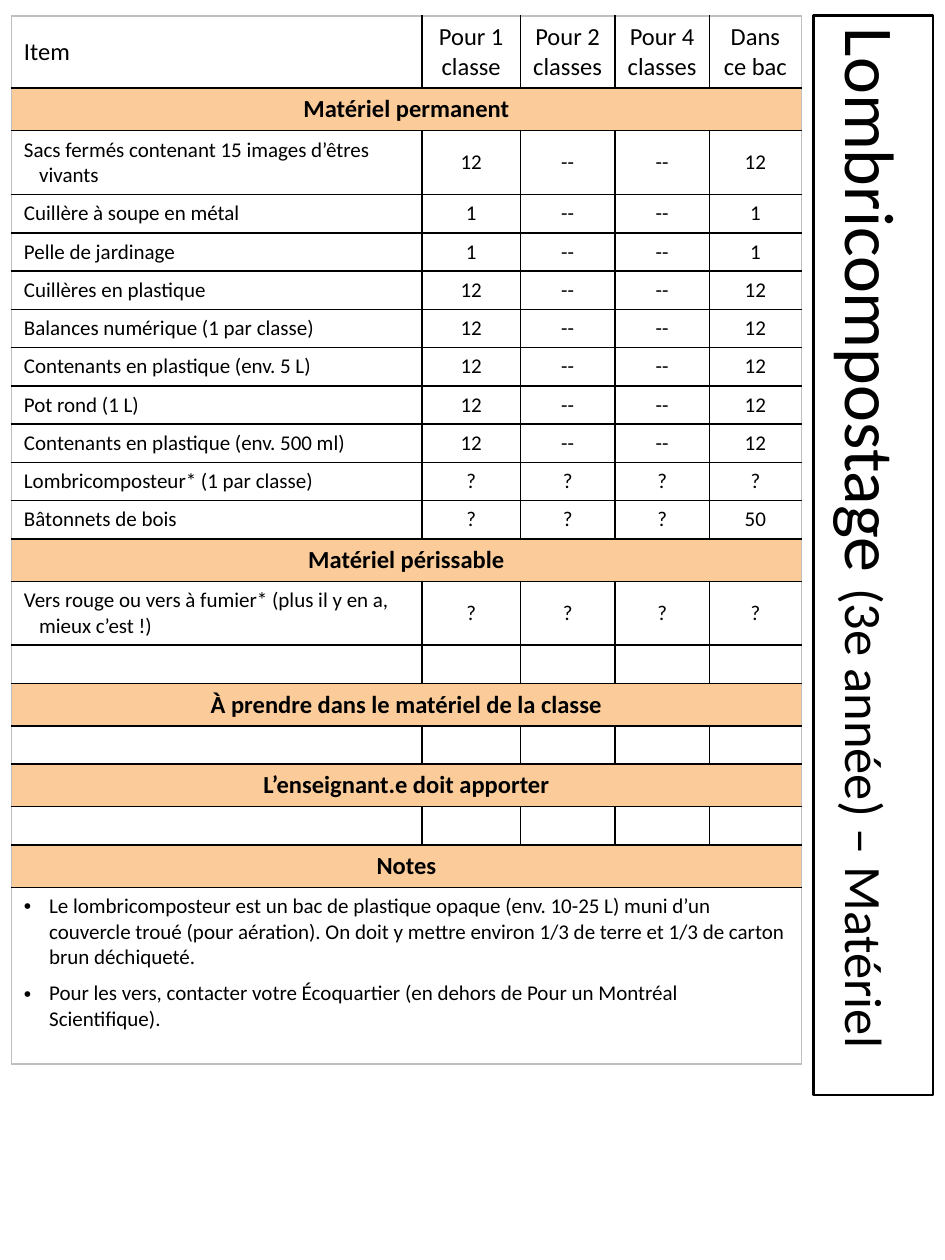
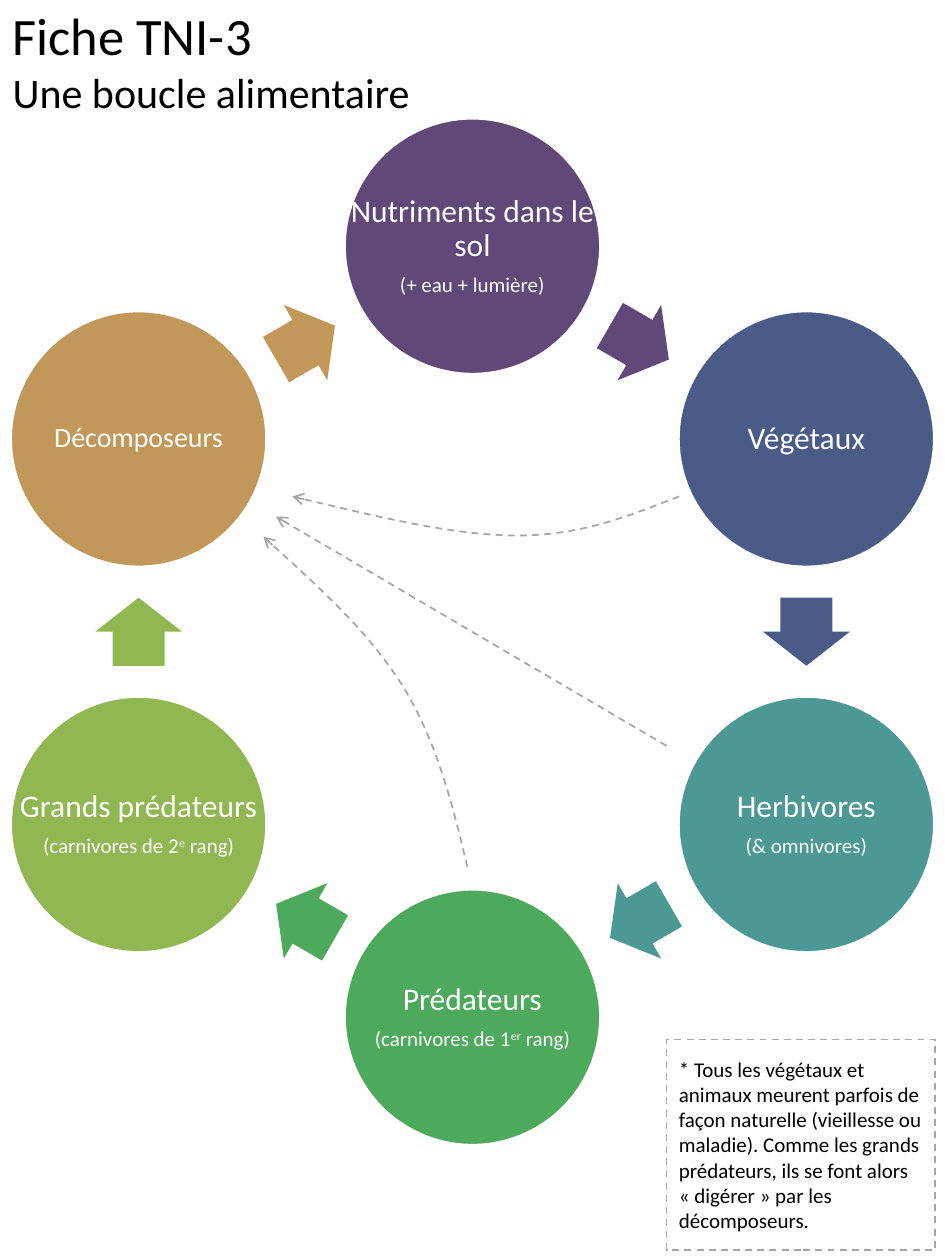
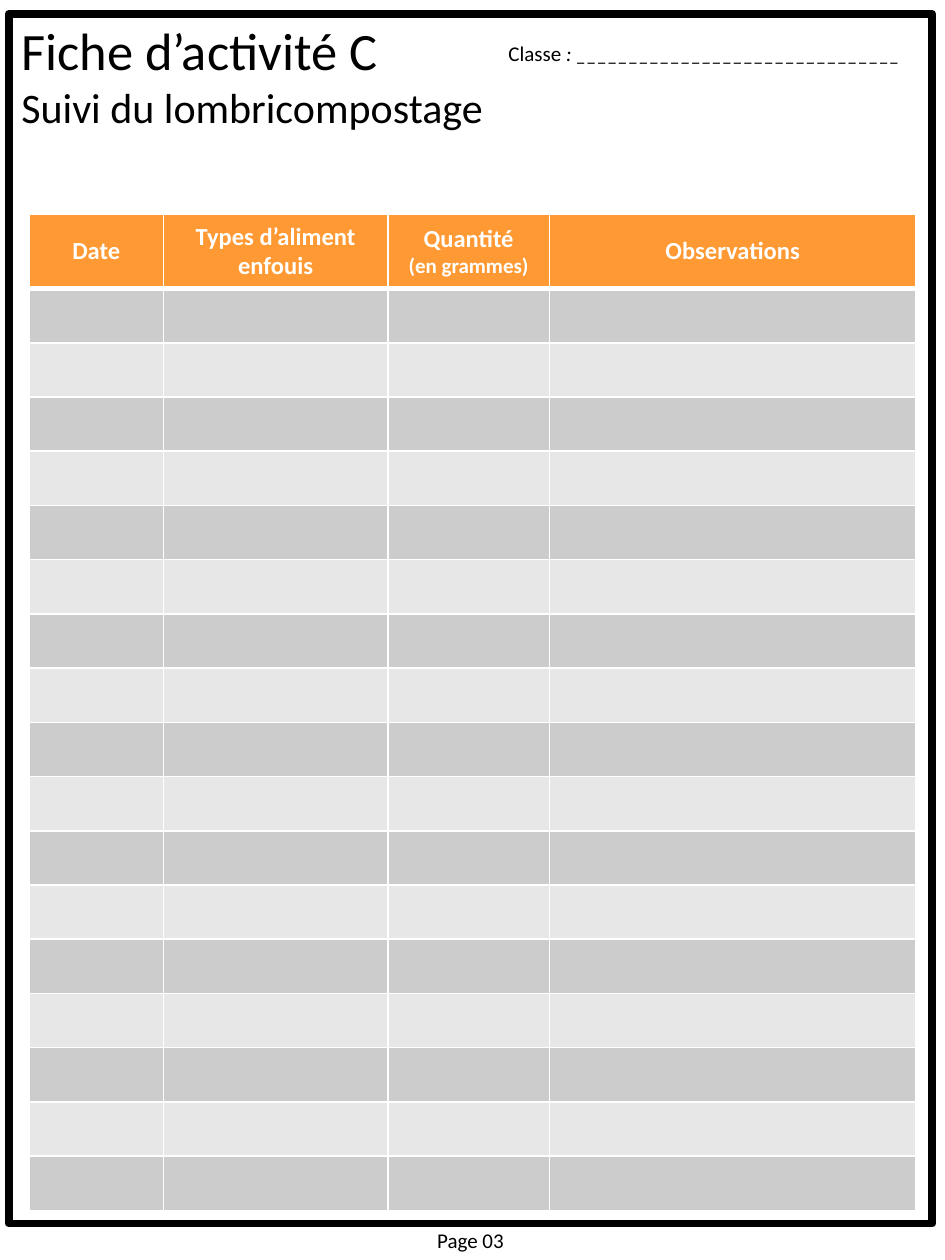
import math
from dataclasses import dataclass

import pptx
import pptx.dml.color
import pptx.enum.dml
import pptx.enum.shapes
import pptx.enum.text
import pptx.oxml.ns
import pptx.util
from lxml import etree

Pt = pptx.util.Pt
RGB = pptx.dml.color.RGBColor.from_string
qn = pptx.oxml.ns.qn
ALIGN = pptx.enum.text.PP_ALIGN
ANCHOR = pptx.enum.text.MSO_ANCHOR
SHAPE = pptx.enum.shapes.MSO_SHAPE
DASH = pptx.enum.dml.MSO_LINE.DASH


@dataclass(frozen=True)
class Theme:
    font: str = "Calibri"
    ink: str = "000000"
    paper: str = "FFFFFF"
    band: str = "FBCC9A"
    header: str = "FF9933"
    stripes: tuple = ("CCCCCC", "E7E7E7")
    edge: str = "BFBFBF"
    faint: str = "A6A6A6"
    banner: int = 40
    title: int = 30
    subtitle: int = 24
    stage: int = 18
    heading: int = 14
    body: int = 12


theme = Theme()


def write(frame, lines, align=ALIGN.LEFT, anchor=ANCHOR.MIDDLE, wrap=True, color=theme.ink, **base):
    """Fill a text frame; each line is a list of (text, format) runs, "\\v" breaks a line."""
    for name, value in {"word_wrap": wrap, "vertical_anchor": anchor,
                        "auto_size": pptx.enum.text.MSO_AUTO_SIZE.NONE}.items():
        setattr(frame, name, value)
    for number, runs in enumerate(lines):
        paragraph = frame.add_paragraph() if number else frame.paragraphs[0]
        paragraph.alignment = align
        for text, changes in runs:
            if text == "\v":
                paragraph.add_line_break()
                continue
            run = paragraph.add_run()
            run.text = text
            run.font.color.rgb = RGB(color)
            formats = {"name": theme.font, **base, **changes}
            if formats.pop("raised", False):
                run._r.get_or_add_rPr().set("baseline", "30000")
            for name, value in formats.items():
                setattr(run.font, name, value)


def style_cell(cell, fill, borders):
    """Give a cell its fill and its borders, a dict of side to (colour, width)."""
    properties = cell._tc.get_or_add_tcPr()
    for side in "LRTB":
        color, width = borders[side]
        line = etree.SubElement(properties, qn(f"a:ln{side}"), w=str(Pt(width)))
        solid = etree.SubElement(line, qn("a:solidFill"))
        etree.SubElement(solid, qn("a:srgbClr"), val=color)
    if fill:
        cell.fill.solid()
        cell.fill.fore_color.rgb = RGB(fill)
    else:
        cell.fill.background()
    if not cell.text_frame.text:
        end = cell.text_frame.paragraphs[0]._p
        etree.SubElement(end, qn("a:endParaRPr"), sz=str(theme.body * 100))


deck = pptx.Presentation()
deck.slide_width, deck.slide_height = Pt(540), Pt(720)
title_only, title_and_body = deck.slide_layouts[5], deck.slide_layouts[1]

# Slide 1: list of material
slide = deck.slides.add_slide(title_only)
banner = slide.shapes.title
for name, value in {"left": 190.4, "top": 283, "width": 617, "height": 68.4}.items():
    setattr(banner, name, Pt(value))
banner.rotation = 90
banner.line.color.rgb = RGB(theme.ink)
banner.line.width = Pt(1.5)
write(banner.text_frame, [[("Lombricompostage ", {"size": Pt(theme.banner)}),
                           ("(3e année) – Matériel", {"size": Pt(theme.title)})]])

DOZEN = ["12", "--", "--", "12"]
SINGLE = ["1", "--", "--", "1"]
UNKNOWN = ["?"] * 4
BLANK = [""] * 5
notes = [
    "Le lombricomposteur est un bac de plastique opaque (env. 10-25 L) muni d’un couvercle troué "
    "(pour aération). On doit y mettre environ 1/3 de terre et 1/3 de carton brun déchiqueté.",
    "Pour les vers, contacter votre Écoquartier (en dehors de Pour un Montréal Scientifique).",
]
# A row of one text is a section band; "notes" marks the row of notes.
material = [
    ["Item", "Pour 1 classe", "Pour 2 classes", "Pour 4 classes", "Dans ce bac"],
    ["Matériel permanent"],
    ["Sacs fermés contenant 15 images d’êtres vivants", *DOZEN],
    ["Cuillère à soupe en métal", *SINGLE],
    ["Pelle de jardinage", *SINGLE],
    ["Cuillères en plastique", *DOZEN],
    ["Balances numérique (1 par classe)", *DOZEN],
    ["Contenants en plastique (env. 5 L)", *DOZEN],
    ["Pot rond (1 L)", *DOZEN],
    ["Contenants en plastique (env. 500 ml)", *DOZEN],
    ["Lombricomposteur* (1 par classe)", *UNKNOWN],
    ["Bâtonnets de bois", "?", "?", "?", "50"],
    ["Matériel périssable"],
    ["Vers rouge ou vers à fumier* (plus il y en a, mieux c’est !)", *UNKNOWN],
    BLANK,
    ["À prendre dans le matériel de la classe"],
    BLANK,
    ["L’enseignant.e doit apporter"],
    BLANK,
    ["Notes"],
    ["notes"],
]
last_row, last_column = len(material) - 1, 4
inventory = slide.shapes.add_table(len(material), 5, Pt(6.5), Pt(9), Pt(451.5), Pt(599)).table
inventory.first_row = inventory.horz_banding = False
for column, width in zip(inventory.columns, (234.7, 56.2, 54, 54, 52.6)):
    column.width = Pt(width)
for r, entries in enumerate(material):
    is_notes = r == last_row
    is_merged = len(entries) == 1
    is_band = is_merged and not is_notes
    if r == 0:
        height = 41.4
    elif is_notes:
        height = 101
    elif is_band:
        height = 24.3
    else:
        height = 36.5 if len(entries[0]) > 40 else 21.85
    inventory.rows[r].height = Pt(height)
    if is_merged:
        inventory.cell(r, 0).merge(inventory.cell(r, last_column))
    size = theme.heading if r == 0 or is_band else theme.body
    for c, text in enumerate(entries):
        cell = inventory.cell(r, c)
        if is_notes:
            write(cell.text_frame, [[(note, {})] for note in notes], size=Pt(size))
            cell.vertical_anchor = ANCHOR.TOP
            for number, paragraph in enumerate(cell.text_frame.paragraphs):
                properties = paragraph._p.get_or_add_pPr()
                properties.set("marL", str(Pt(14.4)))
                properties.set("indent", str(-Pt(14.4)))
                etree.SubElement(properties, qn("a:buFont"), typeface="Arial")
                etree.SubElement(properties, qn("a:buChar"), char="•")
                if number:
                    paragraph.space_before = Pt(6)
            continue
        cell.vertical_anchor = ANCHOR.MIDDLE
        if text:
            write(cell.text_frame, [[(text, {})]], size=Pt(size), bold=is_band,
                  align=ALIGN.CENTER if is_band or c else ALIGN.LEFT)
            if r and not is_band and c == 0:
                properties = cell.text_frame.paragraphs[0]._p.get_or_add_pPr()
                properties.set("marL", str(Pt(8.64)))
                properties.set("indent", str(-Pt(8.64)))
    for c in range(5):
        outer = {"L": c == 0, "R": is_merged or c == last_column, "T": r == 0, "B": is_notes}
        style_cell(inventory.cell(r, c), theme.band if is_band else None,
                   {side: (theme.edge if edge else theme.ink, 1) for side, edge in outer.items()})

# Slide 2: food loop
slide = deck.slides.add_slide(title_only)
heading = slide.shapes.title
for name, value in {"left": 0, "top": 0, "width": 336, "height": 68.4}.items():
    setattr(heading, name, Pt(value))
write(heading.text_frame, [[("Fiche TNI-3", {"size": Pt(theme.title)})],
                           [("Une boucle alimentaire", {"size": Pt(theme.subtitle)})]])

small = {"size": Pt(theme.body)}
raised = {**small, "raised": True}
stages = [
    ("604878", [[("Nutriments dans le", {}), ("\v", {}), ("sol", {})], [("(+ eau + lumière)", small)]]),
    ("4A5B88", [[("Végétaux", {})]]),
    ("4C9894", [[("Herbivores", {})], [("(& omnivores)", small)]]),
    ("4DA95C", [[("Prédateurs", {})],
                [("(carnivores de 1", small), ("er", raised), (" rang)", small)]]),
    ("90B751", [[("Grands prédateurs", {})],
                [("(carnivores de 2", small), ("e", raised), (" rang)", small)]]),
    ("C19859", [[("Décomposeurs", {"size": Pt(16)})]]),
]
center_x, center_y, loop_radius, diameter = 270, 361, 220.3, 146.2
arrow_width, arrow_height = 38.9, 49.7
arrow_radius = loop_radius * math.cos(math.radians(30))
for step, (color, label) in enumerate(stages):
    angle = math.radians(60 * step - 90)
    x = center_x + loop_radius * math.cos(angle)
    y = center_y + loop_radius * math.sin(angle)
    circle = slide.shapes.add_shape(SHAPE.OVAL, Pt(x - diameter / 2), Pt(y - diameter / 2),
                                    Pt(diameter), Pt(diameter))
    circle.line.color.rgb = RGB(theme.paper)
    circle.line.width = Pt(1.5)
    write(circle.text_frame, label, ALIGN.CENTER, wrap=False, color=theme.paper, size=Pt(theme.stage))
    for paragraph in circle.text_frame.paragraphs:
        paragraph.line_spacing = 0.9
        paragraph.space_after = Pt(6.3)

    angle += math.radians(30)
    x = center_x + arrow_radius * math.cos(angle)
    y = center_y + arrow_radius * math.sin(angle)
    arrow = slide.shapes.add_shape(SHAPE.RIGHT_ARROW, Pt(x - arrow_width / 2),
                                   Pt(y - arrow_height / 2), Pt(arrow_width), Pt(arrow_height))
    arrow.adjustments[0], arrow.adjustments[1] = 0.6, 0.5
    arrow.rotation = 30 + 60 * step
    arrow.line.fill.background()
    for part in (circle, arrow):
        part.shadow.inherit = False
        part.fill.solid()
        part.fill.fore_color.rgb = RGB(color)

herbivore_remains = slide.shapes.add_connector(
    pptx.enum.shapes.MSO_CONNECTOR.STRAIGHT, Pt(380.9), Pt(426.2), Pt(157.7), Pt(295.2))
etree.SubElement(herbivore_remains._element.spPr, qn("a:effectLst"))
remains = [herbivore_remains]
# Each curve is a start point followed by two Bézier segments of three points.
for start, *bends in (
    [(267.1, 495.4), (258.5, 459.4), (249.8, 424.1), (230.4, 392.4),
     (211, 361.4), (180.7, 334.1), (150.5, 306.7)],
    [(388.1, 283.7), (360, 294.5), (332.6, 306), (295.9, 306),
     (259.2, 306), (213.1, 294.5), (167, 283.7)],
):
    builder = slide.shapes.build_freeform(Pt(start[0]), Pt(start[1]))
    builder.add_line_segments([(Pt(x), Pt(y)) for x, y in bends], close=False)
    curve = builder.convert_to_shape()
    curve.shadow.inherit = False
    curve.fill.background()
    outline = next(curve._element.iter(qn("a:path")))
    segments = outline.findall(qn("a:lnTo"))
    for first in (0, 3):
        bezier = etree.SubElement(outline, qn("a:cubicBezTo"))
        for segment in segments[first:first + 3]:
            bezier.append(segment[0])
            outline.remove(segment)
    remains.append(curve)

remark = slide.shapes.add_shape(SHAPE.RECTANGLE, Pt(380.9), Pt(594), Pt(153.4), Pt(120.2))
remark.shadow.inherit = False
remark.fill.background()
write(remark.text_frame, [[(
    "* Tous les végétaux et animaux meurent parfois de façon naturelle (vieillesse ou maladie). "
    "Comme les grands prédateurs, ils se font alors « digérer » par les décomposeurs.", small)]])
for part in (*remains, remark):
    part.line.color.rgb = RGB(theme.faint)
    part.line.width = Pt(1)
    part.line.dash_style = DASH
for path_line in remains:
    etree.SubElement(path_line.line._get_or_add_ln(), qn("a:tailEnd"), type="arrow")

# Slide 3: composting log
slide = deck.slides.add_slide(title_and_body)
heading, class_name = slide.shapes.title, slide.placeholders[1]
page_frame = slide.shapes.add_shape(SHAPE.RECTANGLE, Pt(5), Pt(8), Pt(527.8), Pt(691.2))
page_frame.shadow.inherit = False
page_frame.fill.background()
page_frame.line.color.rgb = RGB(theme.ink)
page_frame.line.width = Pt(4.5)

for part, box in ((heading, {"left": 5, "top": 19.4, "width": 527.8, "height": 46.8}),
                  (class_name, {"left": 283.7, "top": 19.4, "width": 247, "height": 46.8})):
    for name, value in box.items():
        setattr(part, name, Pt(value))
write(heading.text_frame, [[("Fiche d’activité C", {"size": Pt(theme.title)})],
                           [("Suivi du lombricompostage", {"size": Pt(theme.subtitle)})]])
properties = class_name.text_frame.paragraphs[0]._p.get_or_add_pPr()
properties.set("marL", "0")
properties.set("indent", "0")
etree.SubElement(properties, qn("a:buNone"))
write(class_name.text_frame, [[("Classe", {}), (" : _______________________________", {"italic": True})]],
      ALIGN.RIGHT, ANCHOR.TOP, size=Pt(theme.body))
class_name.text_frame.paragraphs[0].space_before = Pt(0)
class_name.text_frame.margin_left = Pt(0)
class_name.text_frame.margin_right = Pt(16)

columns = [
    (76.8, [[("Date", {})]]),
    (128.2, [[("Types d’aliment enfouis", {})]]),
    (92.4, [[("Quantité", {})], [("(en grammes)", small)]]),
    (209.5, [[("Observations", {})]]),
]
entry_rows = 17
log = slide.shapes.add_table(entry_rows + 1, len(columns), Pt(16.6), Pt(122.6), Pt(506.9), Pt(569.3)).table
log.first_row = log.horz_banding = False
for r, row in enumerate(log.rows):
    row.height = Pt(31 if r else 42.3)
    for c, (width, label) in enumerate(columns):
        log.columns[c].width = Pt(width)
        cell = log.cell(r, c)
        if r == 0:
            write(cell.text_frame, label, ALIGN.CENTER, color=theme.paper, size=Pt(theme.heading), bold=True)
            cell.vertical_anchor = ANCHOR.MIDDLE
        widths = {"L": 1, "R": 1, "T": 3 if r == 1 else 1, "B": 3 if r == 0 else 1}
        style_cell(cell, theme.stripes[(r - 1) % 2] if r else theme.header,
                   {side: (theme.paper, weight) for side, weight in widths.items()})

page_number = slide.shapes.add_textbox(Pt(5), Pt(697.7), Pt(527.8), Pt(21.6))
write(page_number.text_frame, [[("Page 03", small)]], ALIGN.CENTER, ANCHOR.TOP)

deck.save("out.pptx")
